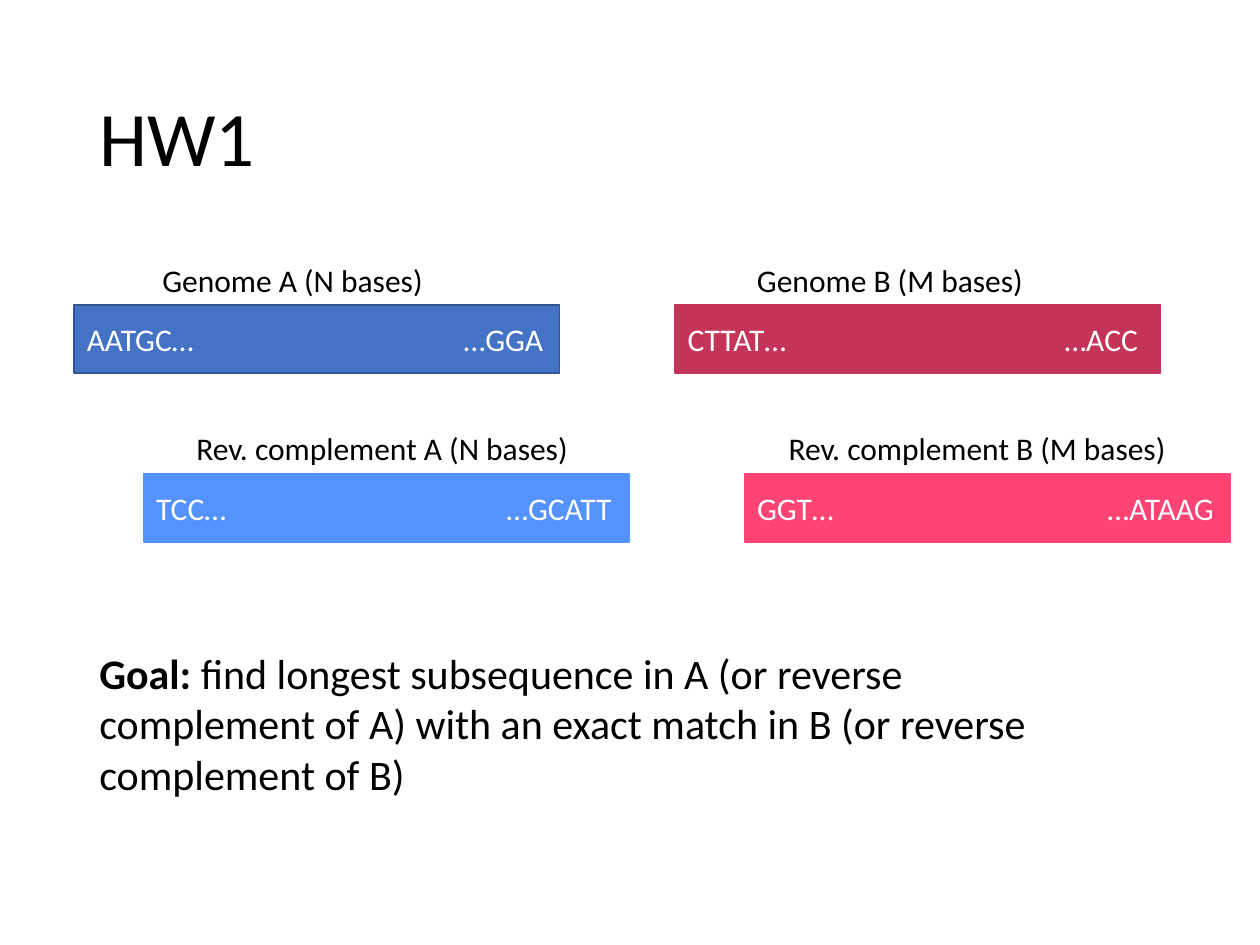
from lxml.etree import SubElement
from pptx import Presentation
from pptx.dml.color import RGBColor
from pptx.enum.shapes import MSO_SHAPE
from pptx.enum.text import MSO_ANCHOR, PP_ALIGN
from pptx.oxml.ns import qn
from pptx.util import Inches, Pt

COLORS = {
    "text": "000000",
    "bar_text": "FFFFFF",
    "genome_a": "4472C4",
    "genome_a_edge": "325491",
    "genome_b": "C43458",
    "reverse_a": "5392FF",
    "reverse_b": "FF4374",
}


def add_run(paragraph, text, size, color="text", bold=False):
    run = paragraph.add_run()
    run.text = text
    font_format = {"name": "Calibri", "size": Pt(size), "bold": bold}
    for attribute, value in font_format.items():
        setattr(run.font, attribute, value)
    run.font.color.rgb = RGBColor.from_string(COLORS[color])


def add_text(box, runs, size, anchor=MSO_ANCHOR.TOP):
    area = slide.shapes.add_textbox(*[Inches(length) for length in box])
    frame_format = {"word_wrap": True, "vertical_anchor": anchor}
    for attribute, value in frame_format.items():
        setattr(area.text_frame, attribute, value)
    paragraph = area.text_frame.paragraphs[0]
    for text, bold in runs:
        add_run(paragraph, text, size, bold=bold)
    return paragraph


presentation = Presentation()
presentation.slide_width = Inches(10)
presentation.slide_height = Inches(7.5)
slide = presentation.slides.add_slide(presentation.slide_layouts[6])

title = add_text((0.69, 0.4, 8.62, 1.45), [("HW1", False)], 44, MSO_ANCHOR.MIDDLE)
title.line_spacing = 0.9

genome_top, reverse_top = 2.42, 3.76
genome_tab, reverse_tab = 2.99, 2.78
sequences = [
    (0.59, genome_top, "genome_a", "genome_a_edge", "AATGC…", "…GGA", genome_tab,
     "Genome A (N bases)", 1.19, 2.7),
    (5.36, genome_top, "genome_b", "genome_b", "CTTAT…", "…ACC", genome_tab,
     "Genome B (M bases)", 5.91, 2.7),
    (1.14, reverse_top, "reverse_a", "reverse_a", "TCC…", "…GCATT", reverse_tab,
     "Rev. complement A (N bases)", 1.46, 3.24),
    (5.91, reverse_top, "reverse_b", "reverse_b", "GGT…", "…ATAAG", reverse_tab,
     "Rev. complement B (M bases)", 6.16, 3.25),
]

for left, top, fill, edge, start, end, tab, label, label_left, label_width in sequences:
    bar = slide.shapes.add_shape(
        MSO_SHAPE.RECTANGLE, Inches(left), Inches(top), Inches(3.85), Inches(0.54)
    )
    bar.shadow.inherit = False
    bar.fill.solid()
    bar.fill.fore_color.rgb = RGBColor.from_string(COLORS[fill])
    bar.line.color.rgb = RGBColor.from_string(COLORS[edge])
    bar.line.width = Pt(1)
    bar.text_frame.word_wrap = True
    bar.text_frame.vertical_anchor = MSO_ANCHOR.MIDDLE
    bases = bar.text_frame.paragraphs[0]
    bases.alignment = PP_ALIGN.LEFT
    tab_list = SubElement(bases._p.get_or_add_pPr(), qn("a:tabLst"))
    SubElement(tab_list, qn("a:tab"), pos=str(Inches(tab)), algn="l")
    add_run(bases, f"{start}\t{end}", 18, "bar_text")
    add_text((label_left, top - 0.4, label_width, 0.4), [(label, False)], 18)

goal = (
    "find longest subsequence in A (or reverse complement of A) "
    "with an exact match in B (or reverse complement of B)"
)
add_text((0.69, 5.09, 8.08, 1.31), [("Goal: ", True), (goal, False)], 24)

presentation.save("out.pptx")
